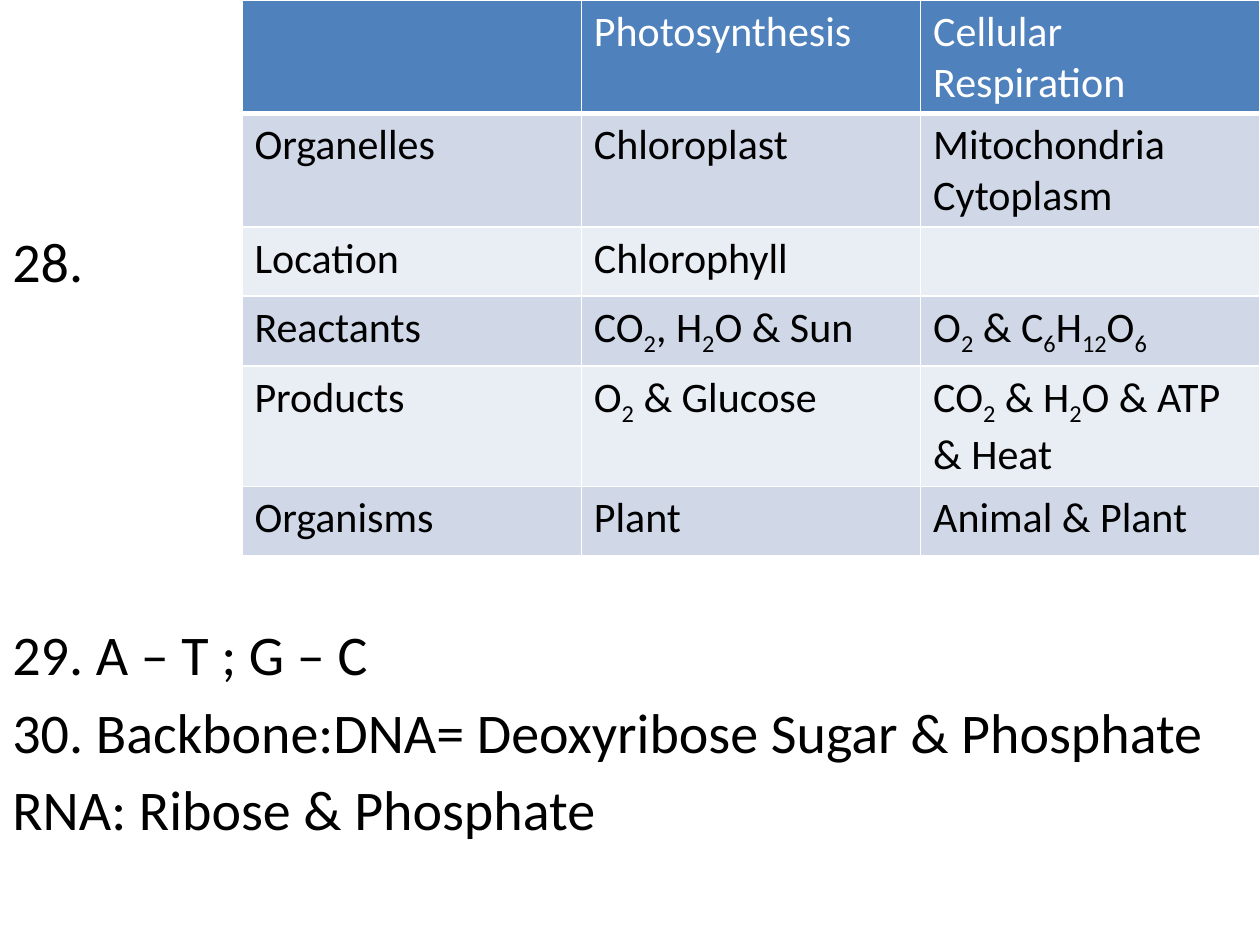
from itertools import groupby
from typing import NamedTuple

from lxml import etree
from pptx import Presentation
from pptx import util as u
from pptx.dml.color import RGBColor
from pptx.oxml import ns

BLACK = RGBColor(0x00, 0x00, 0x00)
WHITE = RGBColor(0xFF, 0xFF, 0xFF)
HEADER_BLUE = RGBColor(0x4F, 0x81, 0xBD)
BANDS = (RGBColor(0xE9, 0xED, 0xF4), RGBColor(0xD0, 0xD8, 0xE8))
FONT = "Calibri"


class Answer(NamedTuple):
    text: str
    space_before: float


class Row(NamedTuple):
    height: float
    label: str
    photosynthesis: str
    respiration: str


ANSWERS = (
    Answer("28.", 0),
    Answer("29. A – T ; G – C", 186),
    Answer("30. Backbone:DNA= Deoxyribose Sugar & Phosphate", 6),
    Answer("RNA: Ribose & Phosphate", 6),
)
ROWS = (
    Row(0.84, "", "Photosynthesis", "Cellular Respiration"),
    Row(0.84, "Organelles", "Chloroplast", "Mitochondria\nCytoplasm"),
    Row(0.55, "Location", "Chlorophyll", ""),
    Row(0.55, "Reactants", "CO2, H2O & Sun", "O2 & C6H12O6"),
    Row(0.84, "Products", "O2 & Glucose", "CO2 & H2O & ATP & Heat"),
    Row(0.55, "Organisms", "Plant", "Animal & Plant"),
)


def style_paragraph(para, size: float, color: RGBColor) -> None:
    para.font.name = FONT
    para.font.size = u.Pt(size)
    para.font.color.rgb = color


def add_answers(page, answers: tuple[Answer, ...]) -> None:
    box = page.shapes.add_textbox(u.Inches(0), u.Inches(1.75), u.Inches(10), u.Inches(4.95))
    frame = box.text_frame
    frame.word_wrap = True
    for index, answer in enumerate(answers):
        para = frame.add_paragraph() if index else frame.paragraphs[0]
        para.text = answer.text
        para.space_before = u.Pt(answer.space_before)
        style_paragraph(para, 32, BLACK)


def add_formula(para, formula: str) -> None:
    for is_subscript, letters in groupby(formula, str.isdigit):
        span = para.add_run()
        span.text = "".join(letters)
        if is_subscript:
            span._r.get_or_add_rPr().set("baseline", "-25000")


def set_borders(cell, bottom_width: float) -> None:
    properties = cell._tc.get_or_add_tcPr()
    for side, width in (("L", 1), ("R", 1), ("T", 1), ("B", bottom_width)):
        line = etree.SubElement(properties, ns.qn(f"a:ln{side}"), w=str(u.Pt(width)))
        fill = etree.SubElement(line, ns.qn("a:solidFill"))
        etree.SubElement(fill, ns.qn("a:srgbClr"), val=str(WHITE))


def fill_cell(cell, content: str, is_header: bool, background: RGBColor) -> None:
    set_borders(cell, 3 if is_header else 1)
    cell.fill.solid()
    cell.fill.fore_color.rgb = background
    frame = cell.text_frame
    for index, line in enumerate(content.split("\n")):
        para = frame.add_paragraph() if index else frame.paragraphs[0]
        add_formula(para, line)
        style_paragraph(para, 24, WHITE if is_header else BLACK)


def add_comparison(page, rows: tuple[Row, ...]) -> None:
    height = sum(row.height for row in rows)
    table = page.shapes.add_table(
        len(rows), 3, u.Inches(1.92), u.Inches(0), u.Inches(8.08), u.Inches(height)
    ).table
    for column in table.columns:
        column.width = u.Inches(8.08 / 3)
    for index, row in enumerate(rows):
        table.rows[index].height = u.Inches(row.height)
        background = BANDS[index % 2] if index else HEADER_BLUE
        contents = (row.label, row.photosynthesis, row.respiration)
        for column, content in enumerate(contents):
            fill_cell(table.cell(index, column), content, index == 0, background)


def main() -> None:
    deck = Presentation()
    deck.slide_width = u.Inches(10)
    deck.slide_height = u.Inches(7.5)
    page = deck.slides.add_slide(deck.slide_layouts[6])
    add_answers(page, ANSWERS)
    add_comparison(page, ROWS)
    deck.save("out.pptx")


if __name__ == "__main__":
    main()
